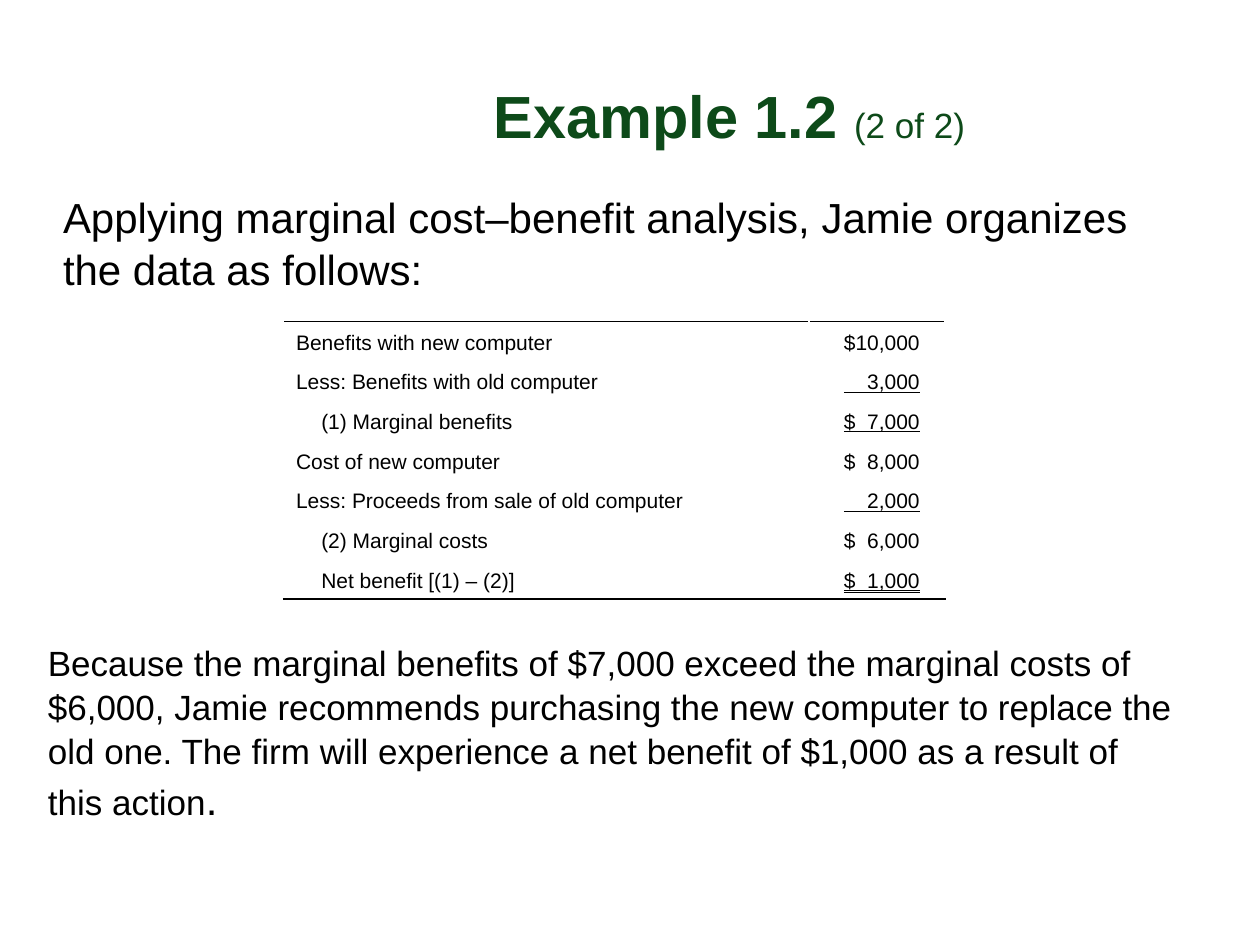
from lxml import etree
from pptx import Presentation
from pptx.dml.color import RGBColor
from pptx.enum.text import MSO_ANCHOR, MSO_AUTO_SIZE, MSO_UNDERLINE, PP_ALIGN
from pptx.oxml.ns import qn
from pptx.util import Inches, Pt

LEFT, RIGHT = PP_ALIGN.LEFT, PP_ALIGN.RIGHT
TOP, BOTTOM = MSO_ANCHOR.TOP, MSO_ANCHOR.BOTTOM
NO_FIT = MSO_AUTO_SIZE.NONE
SINGLE, DOUBLE = MSO_UNDERLINE.SINGLE_LINE, MSO_UNDERLINE.DOUBLE_LINE
FONT = "Arial"
COLORS = {"title": "0D4A19", "text": "000000"}
WIDE, HIGH = 10, 7.5
PAD, STEP = 0.1, 0.2
COLS, ROW = (4.17, 1.08), 0.31
ROWS = [
    ("Benefits with new computer", 0, "$", "10,000", None),
    ("Less: Benefits with old computer", 0, "", "3,000", SINGLE),
    ("(1) Marginal benefits", 1, "$", "7,000", SINGLE),
    ("Cost of new computer", 0, "$", "8,000", None),
    ("Less: Proceeds from sale of old computer", 0, "", "2,000", SINGLE),
    ("(2) Marginal costs", 1, "$", "6,000", None),
    ("Net benefit [(1) – (2)]", 1, "$", "1,000", DOUBLE),
]


def write(para, text, size=12, color="text", bold=False, line=None):
    """Add a formatted run to a paragraph."""
    run = para.add_run()
    run.text = text
    font = run.font
    font.name, font.size, font.bold = FONT, Pt(size), bold
    font.color.rgb = RGBColor.from_string(COLORS[color])
    if line:
        font.underline = line


def place(shape, left, top, width, height, anchor=TOP, space=1.0):
    """Move a placeholder and return its plain, left-aligned paragraph."""
    shape.left, shape.top = Inches(left), Inches(top)
    shape.width, shape.height = Inches(width), Inches(height)
    frame = shape.text_frame
    frame.word_wrap, frame.auto_size = True, NO_FIT
    frame.vertical_anchor = anchor
    frame.margin_left = frame.margin_right = 0
    frame.margin_top = frame.margin_bottom = 0
    para = frame.paragraphs[0]
    props = para._p.get_or_add_pPr()
    props.set("marL", "0")
    props.set("indent", "0")
    etree.SubElement(props, qn("a:buNone"))
    para.alignment, para.line_spacing = LEFT, space
    para.space_before = Pt(0)
    return para


def rule(cell, side):
    """Draw a thin border on one side of a cell."""
    line = etree.Element(qn("a:" + side), w=str(Pt(1)))
    fill = etree.SubElement(line, qn("a:solidFill"))
    etree.SubElement(fill, qn("a:srgbClr"), val=COLORS["text"])
    cell._tc.get_or_add_tcPr().insert(0, line)


def money(sign, digits):
    """Pad an amount so that signs line up; two spaces are one digit wide."""
    return (sign or "  ") + "  " * (6 - len(digits)) + digits


def fill_cell(cell, text, left=PAD, right=PAD, align=LEFT, line=None):
    """Write one table cell without a fill."""
    cell.fill.background()
    cell.margin_left, cell.margin_right = Inches(left), Inches(right)
    para = cell.text_frame.paragraphs[0]
    para.alignment, para.line_spacing = align, 1.15
    write(para, text, line=line)


def add_costs(slide):
    """Add the cost and benefit table."""
    frame = slide.shapes.add_table(
        len(ROWS), len(COLS), Inches(2.25), Inches(2.55),
        Inches(sum(COLS)), Inches(ROW * len(ROWS)))
    table = frame.table
    table.first_row = table.horz_banding = False
    for col, width in zip(table.columns, COLS):
        col.width = Inches(width)
    for num, (label, level, sign, digits, line) in enumerate(ROWS):
        table.rows[num].height = Inches(ROW)
        fill_cell(table.cell(num, 0), label, left=PAD + level * STEP)
        fill_cell(table.cell(num, 1), money(sign, digits),
                  right=PAD * 2, align=RIGHT, line=line)
    for col in range(len(COLS)):
        rule(table.cell(0, col), "lnT")
        rule(table.cell(len(ROWS) - 1, col), "lnB")


def main():
    """Build the slide and save it."""
    deck = Presentation()
    deck.slide_width, deck.slide_height = Inches(WIDE), Inches(HIGH)
    slide = deck.slides.add_slide(deck.slide_layouts[3])
    title, intro, result = list(slide.placeholders)[:3]
    head = place(title, 3.92, -0.01, 0.9 * WIDE, 1.2, anchor=BOTTOM)
    write(head, "Example 1.2 ", size=34, color="title", bold=True)
    write(head, "(2 of 2)", size=20, color="title")
    lead = place(intro, 0.5, 1.5, 0.9 * WIDE, 0.83, space=1.04)
    write(lead, "Applying marginal cost–benefit analysis, Jamie organizes "
          "the data as follows:", size=24)
    add_costs(slide)
    close = place(result, 0.38, 5.08, 0.9 * WIDE, 1.67, space=1.04)
    write(close, "Because the marginal benefits of $7,000 exceed the marginal "
          "costs of $6,000, Jamie recommends purchasing the new computer to "
          "replace the old one. The firm will experience a net benefit of "
          "$1,000 as a result of this action", size=20)
    write(close, ".", size=24)
    deck.save("out.pptx")


if __name__ == "__main__":
    main()
